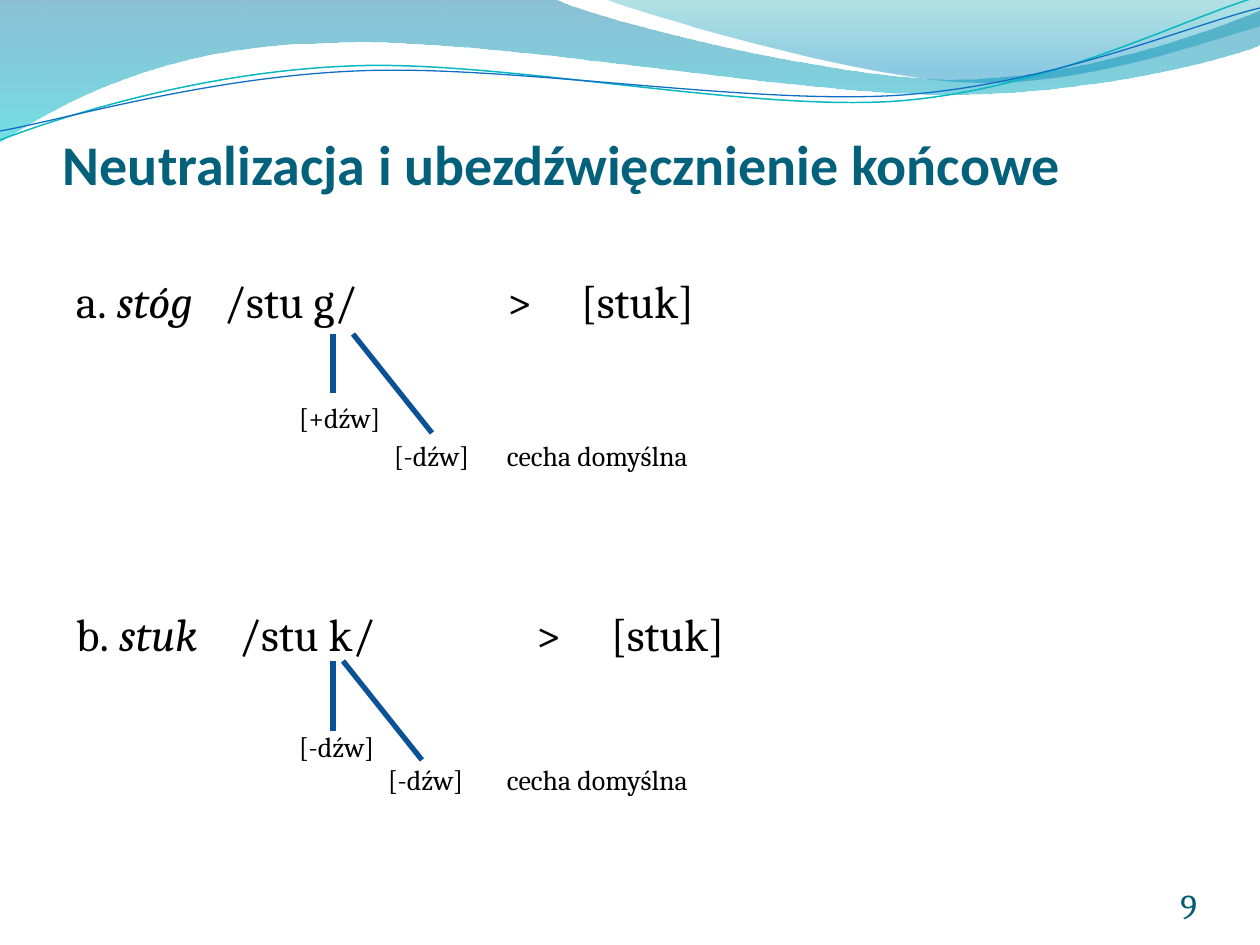
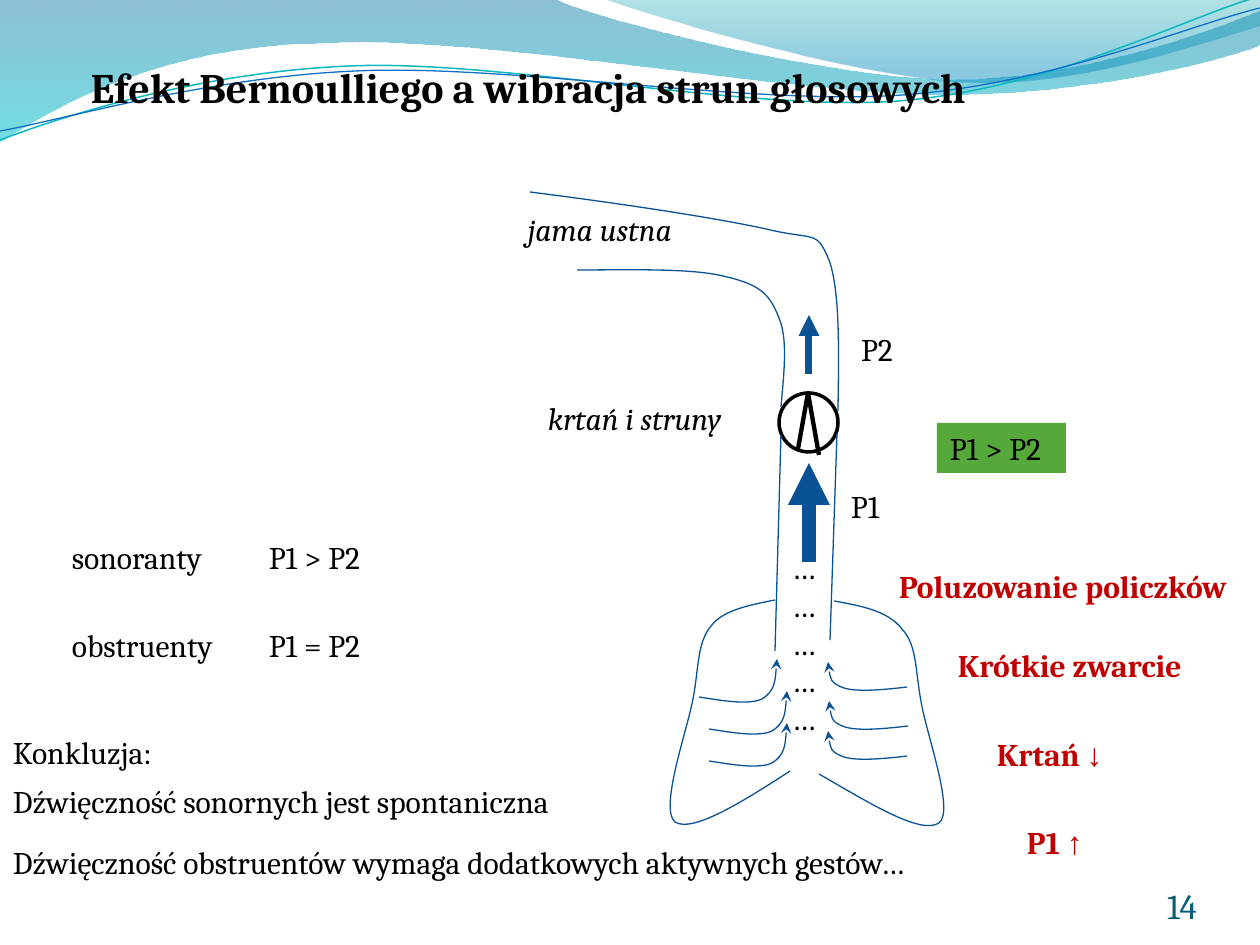
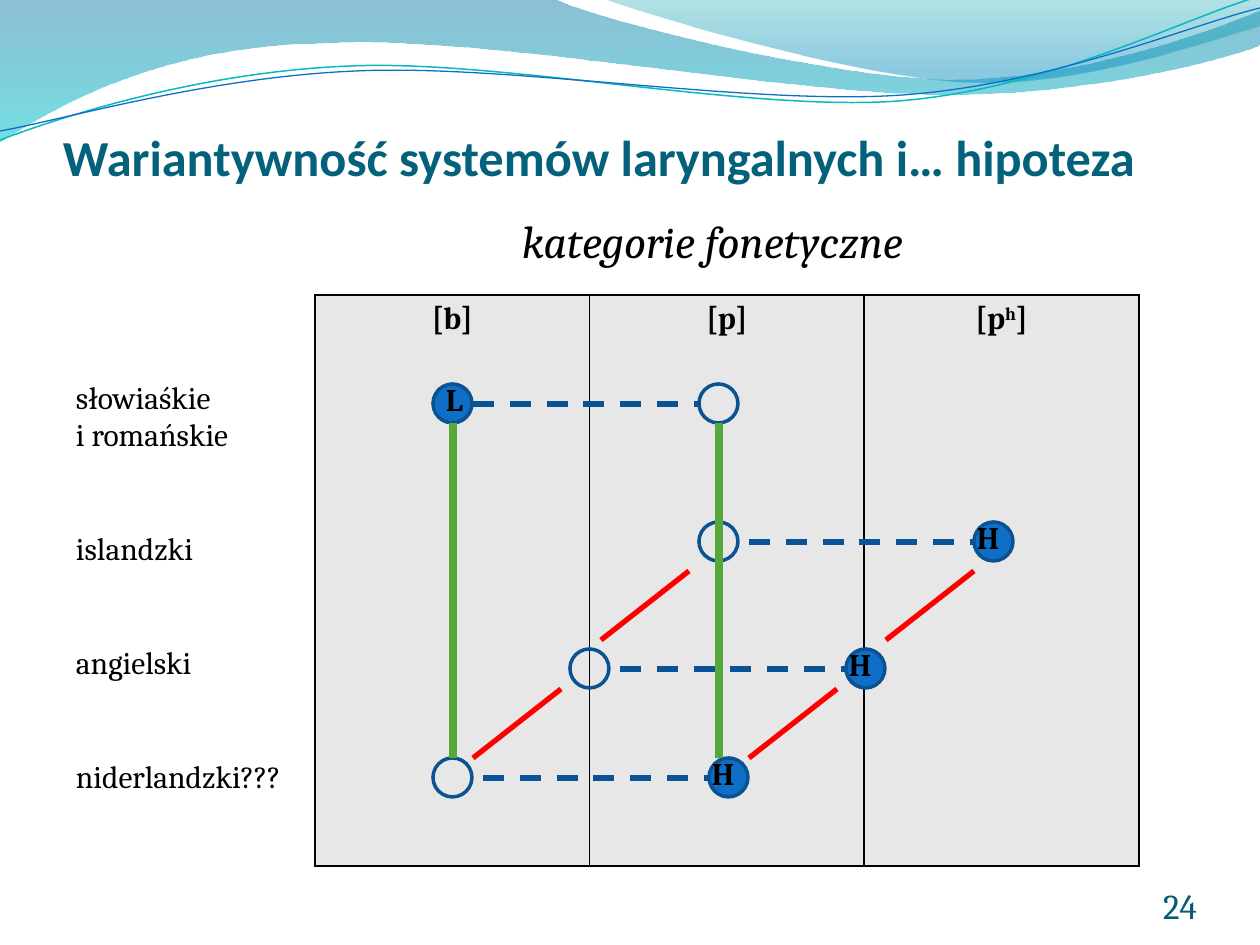
from lxml import etree
from pptx import Presentation
from pptx.dml.color import RGBColor
from pptx.enum.dml import MSO_LINE
from pptx.enum.shapes import MSO_CONNECTOR, MSO_SHAPE
from pptx.enum.text import MSO_ANCHOR, PP_ALIGN
from pptx.oxml.ns import qn
from pptx.util import Emu, Pt

SCALE = 914400 / 126
STRAIGHT = MSO_CONNECTOR.STRAIGHT
RECT, OVAL = MSO_SHAPE.RECTANGLE, MSO_SHAPE.OVAL
TOP, BOTTOM = MSO_ANCHOR.TOP, MSO_ANCHOR.BOTTOM
LEFT, CENTER, RIGHT = PP_ALIGN.LEFT, PP_ALIGN.CENTER, PP_ALIGN.RIGHT
DASH = MSO_LINE.DASH

BODY, HEAD, SYMBOL = "Cambria", "Calibri", "Times New Roman"
BLACK, TITLE, NUMBER = "000000", "04617B", "045D75"
NAVY, OUTLINE, BLUE = "095295", "0B5292", "0F6FC6"
GREEN, RED, DARK_RED, GRAY = "55A839", "FF0000", "C00000", "E7E7E7"
ITALIC = {"italic": True}

WAVES = [
    ([(0, 0), (554, -1), (600, 21, 837, 79, 955, 79),
      (1075, 79, 1207, 33, 1260, 11), (1261, 45),
      (1239, 55, 1096, 96, 940, 94), (784, 94, 481, 35, 324, 43),
      (163, 45, 58, 105, -1, 142), (0, 0)],
     [(0, "0074A1", 45), (1, "00C6CF", 55)]),
    ([(604, -1), (641, 14, 859, 78, 969, 82),
      (1079, 87, 1211, 40, 1260, 26), (1260, 0), (604, -1)],
     [(0, "00A1A9", 30), (0.8, "008BBF", 45)]),
]
WAVE_LINES = [
    ([(0, 140), (60, 117, 199, 72, 349, 66), (498, 59, 747, 112, 898, 101),
      (1050, 89, 1182, 19, 1257, -3)], "0AB8BF", 0.85),
    ([(0, 131), (59, 121, 207, 77, 357, 71), (508, 64, 752, 106, 903, 95),
      (1053, 84, 1187, 26, 1260, 8)], BLUE, 0.75),
]
TRACT = [
    [(281, 227), (284, 193, 288, 159, 279, 138),
     (270, 115, 261, 105, 227, 97), (194, 88, 135, 90, 77, 90)],
    [(338, 231), (339, 170, 340, 110, 329, 80),
     (316, 49, 315, 61, 266, 49), (216, 38, 124, 24, 30, 12)],
    [(281, 255), (275, 471)],
    [(337, 253), (330, 460)],
    [(275, 420), (250, 425, 223, 430, 211, 446),
     (197, 463, 199, 487, 193, 519), (187, 551, 159, 629, 175, 642),
     (192, 653, 241, 623, 290, 591)],
    [(334, 421), (362, 426, 388, 431, 402, 449),
     (417, 465, 415, 488, 421, 521), (426, 553, 455, 631, 439, 643),
     (421, 655, 371, 624, 319, 594)],
]
BRONCHI = [
    ([(0, 38), (25, 42, 50, 46, 63, 40), (76, 32, 77, 16, 78, 0)],
     [(199, 479), (209, 511), (209, 543)]),
    ([(79, 25), (54, 28, 29, 30, 16, 26), (2, 21, 1, 11, 0, 0)],
     [(328, 482), (329, 521), (328, 551)]),
]


def px(n):
    """Turn px into EMU."""
    return Emu(round(n * SCALE))


def rgb(value):
    """Turn a hex string into a colour."""
    return RGBColor.from_string(value)


def add_runs(p, runs, size=18, color=BLACK, font=BODY, bold=False, italic=False):
    """Add runs, each a string or a (string, changed style) pair."""
    base = dict(size=size, color=color, font=font, bold=bold, italic=italic)
    for run in runs:
        words, change = (run, {}) if isinstance(run, str) else run
        style = {**base, **change}
        r = p.add_run()
        r.text = words
        r.font.size = Pt(style["size"])
        r.font.name = style["font"]
        r.font.bold = style["bold"]
        r.font.italic = style["italic"]
        r.font.color.rgb = rgb(style["color"])
        if "baseline" in style:
            r.font._element.set("baseline", str(style["baseline"]))


def write(sp, paras, align=LEFT, anchor=TOP, insets=(13, 6, 13, 6), **style):
    """Fill a shape with paragraphs of runs."""
    tf = sp.text_frame
    tf.word_wrap = True
    tf.vertical_anchor = anchor
    (tf.margin_left, tf.margin_top,
     tf.margin_right, tf.margin_bottom) = map(px, insets)
    for i, runs in enumerate(paras):
        p = tf.paragraphs[0] if i == 0 else tf.add_paragraph()
        p.alignment = align
        add_runs(p, runs, **style)


def text(s, x, y, w, h, *paras, **style):
    """Add a text box."""
    sp = s.shapes.add_textbox(px(x), px(y), px(w), px(h))
    write(sp, paras, **style)
    return sp


def body(s, top, height, rows, **style):
    """Add the body text from rows of space before, tab stops and runs."""
    sp = text(s, 63, top, 1134, height, *[runs for _, _, runs in rows], **style)
    for p, (space, stops, _) in zip(sp.text_frame.paragraphs, rows):
        p.space_before = px(space)
        tabs = etree.SubElement(p._p.get_or_add_pPr(), qn("a:tabLst"))
        for stop in stops:
            etree.SubElement(tabs, qn("a:tab"), pos=str(px(stop)), algn="l")


def paint(sp, fill=None, line=None, width=0.75):
    """Set the fill and outline of a shape, without shadow."""
    sp.shadow.inherit = False
    if fill:
        sp.fill.solid()
        sp.fill.fore_color.rgb = rgb(fill)
    else:
        sp.fill.background()
    if line:
        sp.line.color.rgb = rgb(line)
        sp.line.width = Pt(width)
    else:
        sp.line.fill.background()


def shape(s, kind, x, y, w, h, **look):
    """Add a preset shape."""
    sp = s.shapes.add_shape(kind, px(x), px(y), px(w), px(h))
    paint(sp, **look)
    return sp


def arrow_end(sp, kind):
    """Put an arrowhead at the end of a line."""
    etree.SubElement(sp.line._get_or_add_ln(), qn("a:tailEnd"), type=kind)


def line(s, x1, y1, x2, y2, color=NAVY, width=3, dash=None, head=None):
    """Add a straight line."""
    c = s.shapes.add_connector(STRAIGHT, px(x1), px(y1), px(x2), px(y2))
    c.line.color.rgb = rgb(color)
    c.line.width = Pt(width)
    if dash:
        c.line.dash_style = dash
    if head:
        arrow_end(c, head)
    etree.SubElement(c._element.spPr, qn("a:effectLst"))


def bend(sp, steps):
    """Turn the three segments of each six-number step into one curve."""
    outline_path = next(sp._element.iter(qn("a:path")))
    segments = iter(list(outline_path)[1:])
    for step in steps[1:]:
        first = next(segments)
        if len(step) == 6:
            first.tag_name = None
            curve = etree.Element(qn("a:cubicBezTo"))
            first.addprevious(curve)
            for segment in (first, next(segments), next(segments)):
                curve.append(segment[0])
                outline_path.remove(segment)


def outline(s, left, top, steps, close=False, **look):
    """Add a freeform whose steps are relative to left and top."""
    points = [(px(step[i]), px(step[i + 1]))
              for step in steps for i in range(0, len(step), 2)]
    builder = s.shapes.build_freeform(*points[0], scale=1.0)
    builder.add_line_segments(points[1:], close=close)
    sp = builder.convert_to_shape(px(left), px(top))
    bend(sp, steps)
    paint(sp, **look)
    return sp


def fade(sp, stops):
    """Give a shape a see-through gradient from top to bottom."""
    sp.fill.gradient()
    sp.fill.gradient_angle = 270
    for stop, (position, color, opacity) in zip(sp.fill.gradient_stops, stops):
        stop.position = position
        stop.color.rgb = rgb(color)
        etree.SubElement(stop._gs[0], qn("a:alpha"), val=str(opacity * 1000))


def new_slide(prs, number):
    """Add a slide with the wave band and its number."""
    s = prs.slides.add_slide(prs.slide_layouts[6])
    for steps, stops in WAVES:
        fade(outline(s, 0, 0, steps, close=True), stops)
    for steps, color, width in WAVE_LINES:
        outline(s, 0, 0, steps, line=color, width=width)
    text(s, 1092, 876, 105, 51, [str(number)], size=20, color=NUMBER,
         align=RIGHT, anchor=BOTTOM, insets=(0, 0, 0, 0))
    return s


def title(s, words, height, size):
    """Add the slide title."""
    text(s, 63, 97, 1134, height, [words], size=size, color=TITLE, font=HEAD,
         bold=True, anchor=BOTTOM, insets=(0, 6, 0, 0))


def branches(s, left, top, stem, gap):
    """Link a segment to its own and its default feature."""
    line(s, left, top, left, top + stem)
    line(s, left + gap, top, left + gap + 79, top + 99)


def neutralization_slide(prs):
    """Build the slide on final devoicing."""
    s = new_slide(prs, 9)
    title(s, "Neutralizacja i ubezdźwięcznienie końcowe", 100, 32)
    big = {"size": 26}
    big_italic = {**big, **ITALIC}
    default = ["\t[-dźw]\tcecha domyślna"]
    body(s, 267, 612, [
        (0, (148, 431, 505),
         [("a.", big), (" stóg", big_italic), ("\t/stu g/\t>\t[stuk]", big)]),
        (73, (223,), ["\t[+dźw]"]),
        (4, (318, 431), default),
        (134, (163, 460, 535),
         [("b.", big), (" stuk", big_italic), ("\t/stu k/\t>\t[stuk]", big)]),
        (69, (223,), ["\t[-dźw]"]),
        (0, (312, 431), default)], size=16)
    branches(s, 333, 334, 59, 20)
    branches(s, 333, 661, 70, 10)


def vocal_tract(s, left, top):
    """Draw the airway from the lungs to the mouth."""
    for y1, y2, width in [(382, 283, 8), (194, 135, 4)]:
        line(s, left + 309, top + y1, left + 309, top + y2,
             width=width, head="triangle")
    shape(s, OVAL, left + 279, top + 213, 59, 59, line=BLACK, width=2)
    outline(s, left, top, [(298, 269), (308, 213), (319, 275)],
            line=BLACK, width=2.5)
    for steps in TRACT:
        outline(s, left, top, steps, line=NAVY)
    for steps, places in BRONCHI:
        for x, y in places:
            arrow_end(outline(s, left + x, top + y, steps, line=NAVY), "stealth")
    for x, y, w, h, indent, words, italic in [
            (-120, 24, 456, 63, 148, "jama ustna", True),
            (-28, 213, 275, 50, 76, "krtań i struny", True),
            (338, 301, 59, 50, 13, "P1", False),
            (348, 144, 59, 50, 13, "P2", False),
            (279, 362, 49, 204, 13, "……………", False)]:
        text(s, left + x, top + y, w, h, [words], italic=italic,
             insets=(indent, 6, 13, 6))


def pressure_notes(s, left, top):
    """List the pressure relation of each class of sounds."""
    for i, (name, relation) in enumerate([("sonoranty", "P1 > P2"),
                                          ("obstruenty", "P1 = P2")]):
        y = top + 88 * i
        text(s, left, y, 178, 50, [name])
        text(s, left + 197, y, 129, 50, [relation])


def conclusions(s, left, top):
    """Add the concluding lines."""
    for y, w, words in [
            (0, 207, "Konkluzja:"),
            (49, 620, "Dźwięczność sonornych jest spontaniczna"),
            (110, 1191,
             "Dźwięczność obstruentów wymaga dodatkowych aktywnych gestów…")]:
        text(s, left, top + y, w, 50, [words])


def gestures(s, left, top):
    """Add the red list of voicing gestures."""
    for x, y, w, runs in [
            (0, 0, 374, ["Poluzowanie policzków"]),
            (59, 79, 276, ["Krótkie zwarcie"]),
            (98, 168, 137, ["Krtań ", ("↓", {"font": SYMBOL})]),
            (128, 256, 137, ["P1 ", ("↑", {"font": SYMBOL})])]:
        text(s, left + x, top + y, w, 50, runs, color=DARK_RED, bold=True)


def bernoulli_slide(prs):
    """Build the slide on the Bernoulli effect."""
    s = new_slide(prs, 14)
    text(s, 78, 56, 1063, 63, ["Efekt Bernoulliego a wibracja strun głosowych"],
         size=24, bold=True)
    vocal_tract(s, 500, 180)
    write(shape(s, RECT, 937, 423, 129, 50, fill=GREEN), [["P1 > P2"]])
    pressure_notes(s, 59, 532)
    conclusions(s, 0, 727)
    gestures(s, 886, 561)


def category_table(s, left, top):
    """Add the table of phonetic categories."""
    frame = s.shapes.add_table(1, 3, px(left), px(top), px(824), px(571))
    headings = [["[b]"], ["[p]"], ["[p", ("h", {"baseline": 30000}), "]"]]
    for cell, runs in zip(frame.table.rows[0].cells, headings):
        cell.fill.solid()
        cell.fill.fore_color.rgb = rgb(GRAY)
        p = cell.text_frame.paragraphs[0]
        p.alignment = CENTER
        add_runs(p, runs, bold=True)
        tc_pr = cell._tc.get_or_add_tcPr()
        for i, side in enumerate(("lnL", "lnR", "lnT", "lnB")):
            ln = etree.Element(qn("a:" + side), w=str(Pt(1)))
            fill = etree.SubElement(ln, qn("a:solidFill"))
            etree.SubElement(fill, qn("a:srgbClr"), val=BLACK)
            tc_pr.insert(i, ln)


def contrasts(s, left, top):
    """Draw each system's pair of categories and the links between them."""
    pairs = [("L", 109, 138, 404), ("H", 247, 679, 404),
             ("H", 374, 551, 275), ("H", 483, 414, 138)]
    for _, y, marked, plain in pairs:
        for x, fill in ((marked, BLUE), (plain, None)):
            shape(s, OVAL, left + x - 20, top + y - 20, 39, 39,
                  fill=fill, line=OUTLINE, width=2)
        start, end = sorted((marked, plain))
        gap = 20 if marked < plain else 30
        line(s, left + start + gap, top + y, left + end - 20, top + y, dash=DASH)
    for x, y in [(659, 276), (374, 276), (246, 394), (522, 394)]:
        line(s, left + x, top + y, left + x - 88, top + y + 69, color=RED)
    for x in (138, 404):
        line(s, left + x, top + 128, left + x, top + 463, color=GREEN, width=5)
    for mark, y, x, _ in pairs:
        shift = 20 if mark == "L" else 30
        text(s, left + x - shift, top + y - 30, 49, 50, [mark], bold=True)


def systems_slide(prs):
    """Build the slide on laryngeal systems."""
    s = new_slide(prs, 24)
    title(s, "Wariantywność systemów laryngalnych i… hipoteza", 90, 28.8)
    body(s, 207, 665, [
        (0, (446,), [("\tkategorie fonetyczne", {"size": 26, **ITALIC})]),
        (110, (), ["słowiaśkie"]),
        (0, (), ["i romańskie"]),
        (76, (), ["islandzki"]),
        (76, (), ["angielski"]),
        (76, (), ["niderlandzki???"])])
    category_table(s, 315, 295)
    contrasts(s, 315, 295)


def main():
    """Build and save the presentation."""
    prs = Presentation()
    prs.slide_width, prs.slide_height = px(1260), px(945)
    neutralization_slide(prs)
    bernoulli_slide(prs)
    systems_slide(prs)
    prs.save("out.pptx")


if __name__ == "__main__":
    main()
